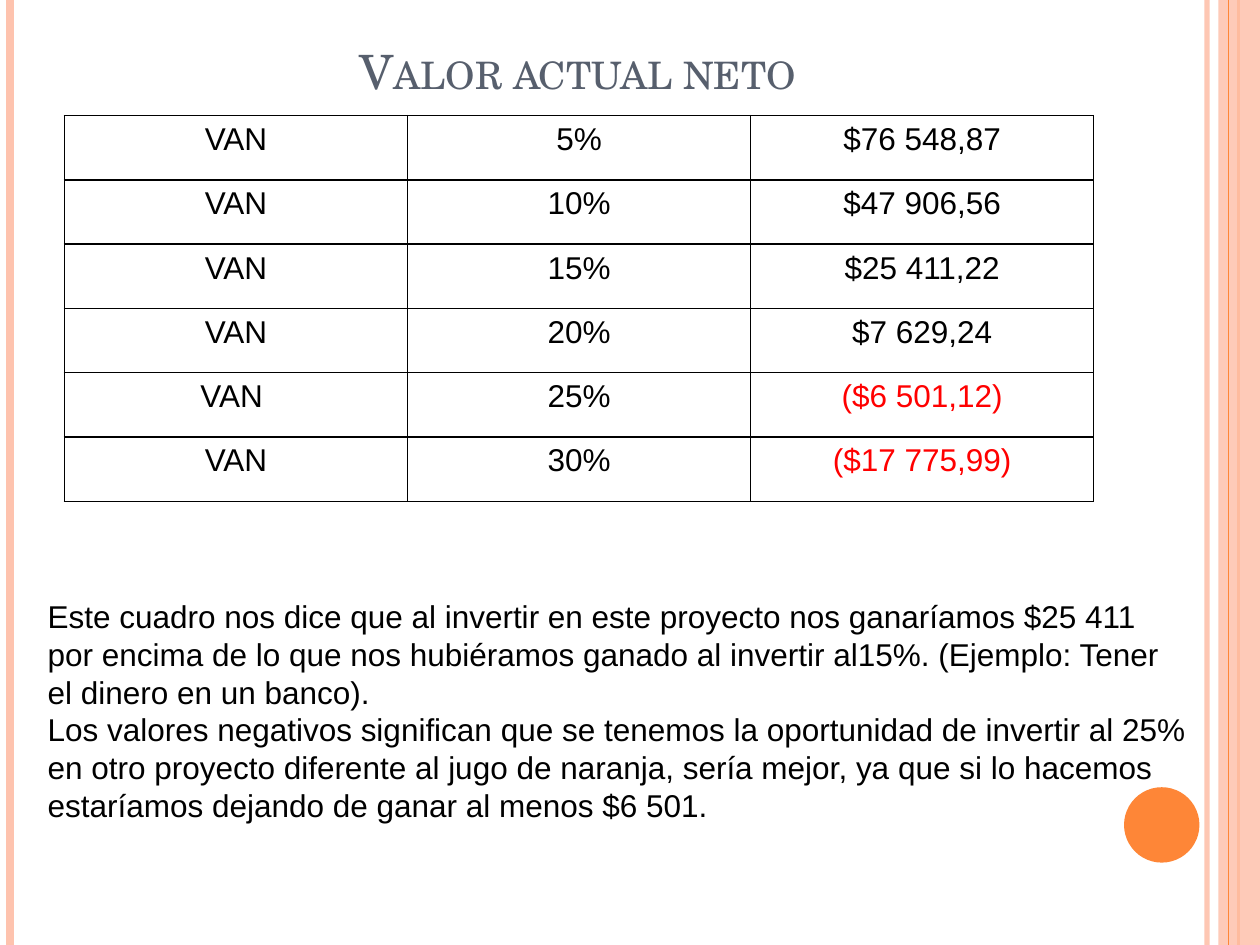
from lxml import etree
from pptx import Presentation
from pptx.dml.color import RGBColor
from pptx.enum import shapes, text
from pptx.oxml.ns import qn
from pptx.util import Cm, Pt

ORANGE = RGBColor(0xFE, 0x86, 0x37)
PEACH = RGBColor(0xFE, 0xC3, 0xAE)
SLATE = RGBColor(0x57, 0x5F, 0x6D)
BLACK = RGBColor(0, 0, 0)
RED = RGBColor(0xFF, 0, 0)

BODY_FONT = "Arial"
TITLE_FONT = "TeX Gyre Schola"

RATES = [
    ("VAN", "5%", "$76 548,87"),
    ("VAN", "10%", "$47 906,56"),
    ("VAN", "15%", "$25 411,22"),
    ("VAN", "20%", "$7 629,24"),
    ("VAN ", "25%", "($6 501,12)"),
    ("VAN", "30%", "($17 775,99)"),
]
EXPLANATION = [
    "Este cuadro nos dice que al invertir en este proyecto nos ganaríamos $25 411",
    "por encima de lo que nos hubiéramos ganado al invertir al15%. (Ejemplo: Tener ",
    "el dinero en un banco).",
    "Los valores negativos significan que se tenemos la oportunidad de invertir al 25%",
    "en otro proyecto diferente al jugo de naranja, sería mejor, ya que si lo hacemos ",
    "estaríamos dejando de ganar al menos $6 501.",
]


def add_run(p, words, font, size, color):
    r = p.add_run()
    r.text = words
    r.font.name = font
    r.font.size = Pt(size)
    r.font.color.rgb = color
    return r


def set_alpha(fill_parent, percent):
    color = fill_parent.find(".//" + qn("a:srgbClr"))
    etree.SubElement(color, qn("a:alpha")).set("val", str(percent * 1000))


def add_rule(slide, x, top, height, color, width, alpha=None):
    line = slide.shapes.add_connector(
        shapes.MSO_CONNECTOR.STRAIGHT, x, top, x, top + height)
    line.line.color.rgb = color
    line.line.width = Pt(width)
    sp_pr = line._element.spPr
    if alpha:
        set_alpha(sp_pr, alpha)
    etree.SubElement(sp_pr, qn("a:effectLst"))


def add_solid(slide, kind, x, y, w, h, color):
    sp = slide.shapes.add_shape(kind, x, y, w, h)
    sp.shadow.inherit = False
    sp.fill.solid()
    sp.fill.fore_color.rgb = color
    sp.line.fill.background()
    return sp


def add_frame(slide, x, y, w, h):
    """Vertical rules, right-hand band and corner disc."""
    right = x + w
    add_rule(slide, right - Cm(1.07), y, h, PEACH, 3, 93)
    add_rule(slide, x + Cm(0.21), y, h, PEACH, 4.5)
    add_rule(slide, right - Cm(0.43), y, h, ORANGE, 1.5)
    band = add_solid(slide, shapes.MSO_SHAPE.RECTANGLE,
                     right - Cm(0.84), y, Cm(0.84), h, PEACH)
    set_alpha(band._element.spPr, 87)
    add_rule(slide, right - Cm(0.64), y, h, ORANGE, 0.75)
    add_solid(slide, shapes.MSO_SHAPE.OVAL, right - Cm(2.74),
              y + h - Cm(3.18), Cm(1.52), Cm(1.52), ORANGE)


def set_title(slide, x, y, w, h):
    title = slide.shapes.title
    title.left, title.top, title.width, title.height = x, y, w, h
    tf = title.text_frame
    tf.auto_size = text.MSO_AUTO_SIZE.NONE
    tf.vertical_anchor = text.MSO_ANCHOR.BOTTOM
    p = tf.paragraphs[0]
    p.alignment = text.PP_ALIGN.CENTER
    r = add_run(p, "Valor actual neto", TITLE_FONT, 27, SLATE)
    r._r.get_or_add_rPr().set("cap", "small")


def add_borders(cell):
    tc_pr = cell._tc.get_or_add_tcPr()
    for i, side in enumerate(("a:lnL", "a:lnR", "a:lnT", "a:lnB")):
        ln = etree.Element(qn(side), w=str(Pt(1)))
        fill = etree.SubElement(ln, qn("a:solidFill"))
        etree.SubElement(fill, qn("a:srgbClr"), val=str(BLACK))
        tc_pr.insert(i, ln)


def add_rate_table(slide, x, y, w, h):
    n_rows, n_cols = len(RATES), len(RATES[0])
    table = slide.shapes.add_table(n_rows, n_cols, x, y, w, h).table
    table.first_row = table.horz_banding = False
    for row, values in zip(table.rows, RATES):
        for cell, value in zip(row.cells, values):
            cell.fill.background()
            add_borders(cell)
            p = cell.text_frame.paragraphs[0]
            p.alignment = text.PP_ALIGN.CENTER
            # Losses are shown in brackets and red
            color = RED if value.startswith("(") else BLACK
            add_run(p, value, BODY_FONT, 18, color)


def add_explanation(slide, x, y, w, h):
    tf = slide.shapes.add_textbox(x, y, w, h).text_frame
    tf.word_wrap = True
    for i, words in enumerate(EXPLANATION):
        p = tf.add_paragraph() if i else tf.paragraphs[0]
        p.alignment = text.PP_ALIGN.JUSTIFY
        p.line_spacing = Pt(21.6)
        add_run(p, words, BODY_FONT, 18, BLACK)


def main():
    prs = Presentation()
    prs.slide_width, prs.slide_height = Cm(25.4), Cm(19.05)
    slide = prs.slides.add_slide(prs.slide_layouts[5])  # title only
    add_frame(slide, 0, 0, prs.slide_width, prs.slide_height)
    set_title(slide, Cm(1.27), Cm(0.76), Cm(20.75), Cm(1.37))
    add_rate_table(slide, Cm(1.3), Cm(2.33), Cm(20.75), Cm(7.78))
    add_explanation(slide, Cm(0.71), Cm(11.91), Cm(23.67), Cm(4.88))
    prs.save("out.pptx")


if __name__ == "__main__":
    main()
